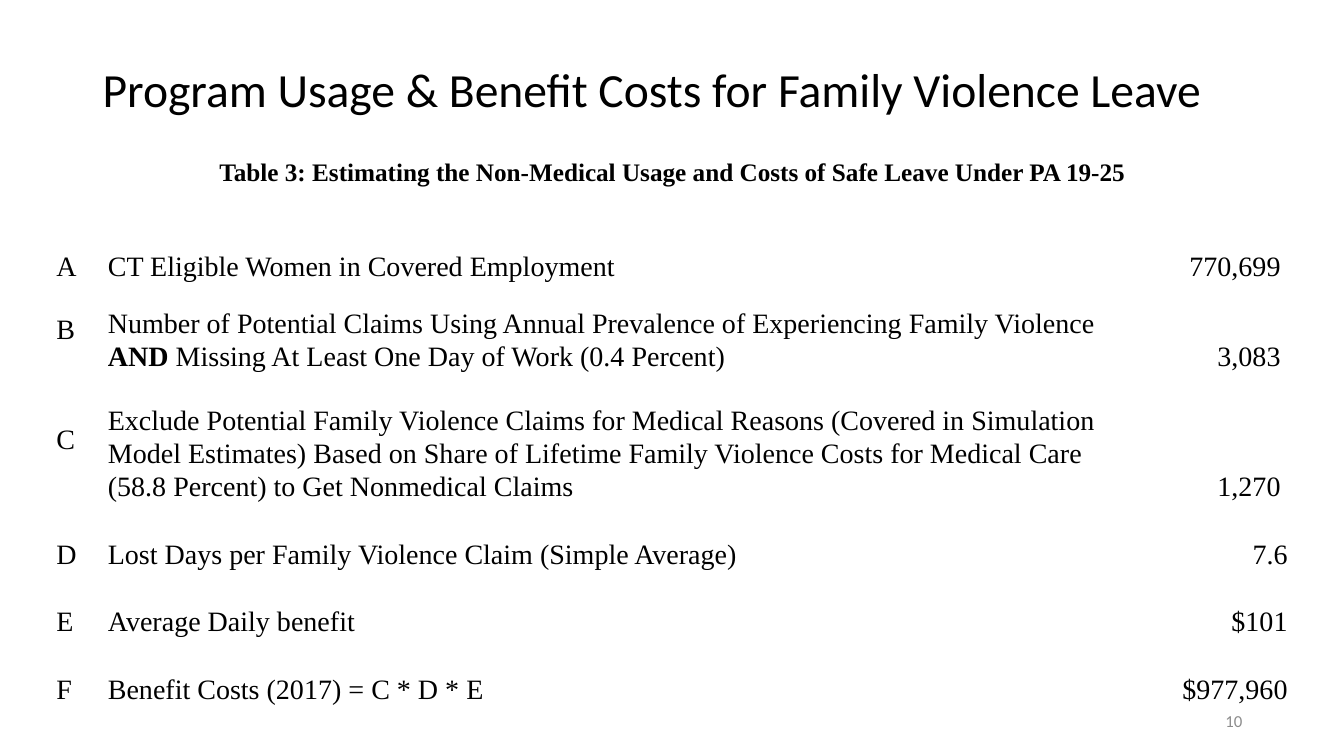
from pptx import Presentation
from pptx.dml.color import RGBColor
from pptx.enum.text import MSO_ANCHOR, PP_ALIGN
from pptx.util import Inches, Pt

LEFT, CENTER, RIGHT = PP_ALIGN.LEFT, PP_ALIGN.CENTER, PP_ALIGN.RIGHT
TOP, MIDDLE, BOTTOM = MSO_ANCHOR.TOP, MSO_ANCHOR.MIDDLE, MSO_ANCHOR.BOTTOM
COLORS = {"ink": "000000", "page": "8C8C8C"}
HEADING_FONT, BODY_FONT = "Calibri", "Times New Roman"
COLUMN_WIDTHS = [0.51, 10.55, 1.39]
COLUMN_ALIGNMENTS = [LEFT, LEFT, RIGHT]
ROW_HEIGHTS = [0.67, 0.9, 1.29, 0.67, 0.67, 0.67]
EMPHASIS = "AND"
ESTIMATES = [
    ("A", "CT Eligible Women in Covered Employment", "770,699 "),
    ("B", "Number of Potential Claims Using Annual Prevalence of Experiencing "
          "Family Violence AND Missing At Least One Day of Work (0.4 Percent)", "3,083 "),
    ("C", "Exclude Potential Family Violence Claims for Medical Reasons (Covered in "
          "Simulation Model Estimates) Based on Share of Lifetime Family Violence Costs "
          "for Medical Care (58.8 Percent) to Get Nonmedical Claims", "1,270 "),
    ("D", "Lost Days per Family Violence Claim (Simple Average)", "7.6"),
    ("E", "Average Daily benefit", "$101"),
    ("F", "Benefit Costs (2017) = C * D * E", "$977,960"),
]


def style_run(run, font_name, size, color="ink", bold=False):
    run.font.name = font_name
    run.font.size = Pt(size)
    run.font.bold = bold
    run.font.color.rgb = RGBColor.from_string(COLORS[color])


def add_label(slide, box, wording, font_name, size, color="ink", bold=False,
              alignment=LEFT, anchor=TOP, spacing=1.0):
    frame = slide.shapes.add_textbox(*map(Inches, box)).text_frame
    frame.word_wrap = True
    frame.vertical_anchor = anchor
    frame.text = wording
    paragraph = frame.paragraphs[0]
    paragraph.alignment = alignment
    paragraph.line_spacing = spacing
    style_run(paragraph.runs[0], font_name, size, color, bold)


def fill_cell(cell, wording, alignment, anchor):
    cell.fill.background()
    cell.vertical_anchor = anchor
    cell.margin_left = cell.margin_right = Inches(0.12)
    cell.margin_top, cell.margin_bottom = Inches(0.02), 0
    paragraph = cell.text_frame.paragraphs[0]
    paragraph.alignment = alignment
    paragraph.line_spacing = 1.07
    for part in filter(None, wording.partition(EMPHASIS)):
        run = paragraph.add_run()
        run.text = part
        style_run(run, BODY_FONT, 20, bold=part == EMPHASIS)


def add_estimates(slide, left, top):
    box = (left, top, sum(COLUMN_WIDTHS), sum(ROW_HEIGHTS))
    table = slide.shapes.add_table(
        len(ROW_HEIGHTS), len(COLUMN_WIDTHS), *map(Inches, box)).table
    table.first_row = table.horz_banding = False
    for column, width in zip(table.columns, COLUMN_WIDTHS):
        column.width = Inches(width)
    for row, height, estimate in zip(table.rows, ROW_HEIGHTS, ESTIMATES):
        row.height = Inches(height)
        for cell, wording, alignment in zip(row.cells, estimate, COLUMN_ALIGNMENTS):
            anchor = MIDDLE if wording in ("B", "C") else BOTTOM
            fill_cell(cell, wording, alignment, anchor)


def main():
    presentation = Presentation()
    presentation.slide_width, presentation.slide_height = Inches(13.33), Inches(7.5)
    slide = presentation.slides.add_slide(presentation.slide_layouts[6])
    add_label(slide, (0.92, 0.61, 11.5, 0.79),
              "Program Usage & Benefit Costs for Family Violence Leave",
              HEADING_FONT, 34, spacing=0.9)
    add_label(slide, (0.92, 1.5, 11.5, 0.4),
              "Table 3: Estimating the Non-Medical Usage and Costs of Safe Leave Under PA 19-25",
              BODY_FONT, 18, bold=True, alignment=CENTER)
    add_label(slide, (9.42, 6.95, 3, 0.4), "10", HEADING_FONT, 12,
              color="page", alignment=RIGHT, anchor=MIDDLE)
    add_estimates(slide, 0.44, 2.13)
    presentation.save("out.pptx")


if __name__ == "__main__":
    main()
